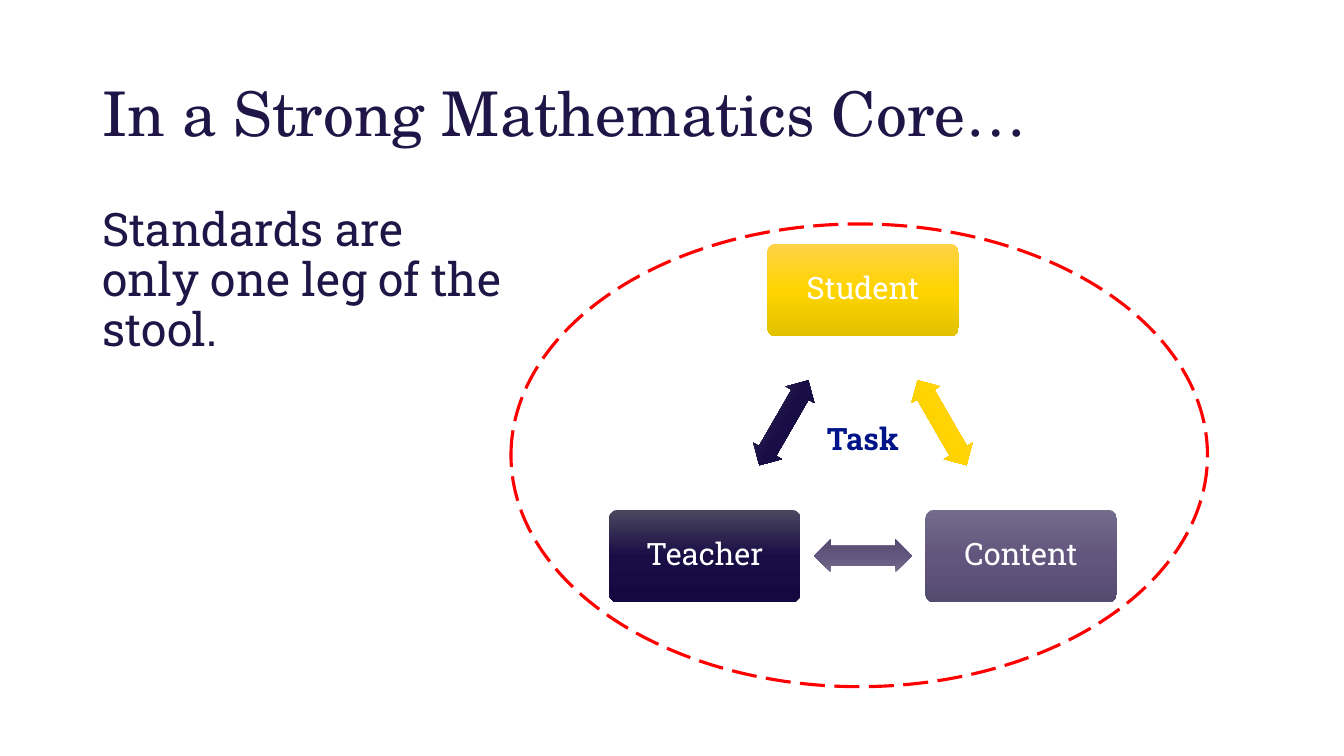
from copy import deepcopy

from pptx import Presentation
from pptx.dml.color import RGBColor
from pptx.enum.dml import MSO_LINE
from pptx.enum.shapes import MSO_SHAPE
from pptx.enum.text import MSO_ANCHOR, PP_ALIGN
from pptx.oxml.ns import qn
from pptx.util import Pt

ROUNDED = MSO_SHAPE.ROUNDED_RECTANGLE
DOUBLE_ARROW = MSO_SHAPE.LEFT_RIGHT_ARROW
OVAL = MSO_SHAPE.OVAL
LONG_DASH = MSO_LINE.LONG_DASH
TOP, MIDDLE = MSO_ANCHOR.TOP, MSO_ANCHOR.MIDDLE
LEFT, CENTER = PP_ALIGN.LEFT, PP_ALIGN.CENTER

NAVY = RGBColor(0x20, 0x15, 0x47)
BLUE = RGBColor(0x00, 0x14, 0x89)
RED = RGBColor(0xFF, 0x00, 0x00)
WHITE = RGBColor(0xFF, 0xFF, 0xFF)
# Top, middle and bottom of each gradient
YELLOWS = (RGBColor(0xFF, 0xD2, 0x47), RGBColor(0xFF, 0xD4, 0x00), RGBColor(0xE3, 0xC1, 0x00))
PURPLES = (RGBColor(0x74, 0x6C, 0x8B), RGBColor(0x62, 0x56, 0x7E), RGBColor(0x55, 0x4A, 0x70))
DARKS = (RGBColor(0x4A, 0x48, 0x5F), RGBColor(0x19, 0x0D, 0x46), RGBColor(0x15, 0x08, 0x40))

HEADING_FONT, BODY_FONT = "TeX Gyre Schola", "Roboto Slab"


def write(shape, text, size=22, font=BODY_FONT, color=WHITE, bold=False,
          align=CENTER, anchor=MIDDLE, spacing=0.9, inset_x=7.2, inset_y=3.6):
    frame = shape.text_frame
    frame.word_wrap = True
    frame.vertical_anchor = anchor
    frame.margin_left = frame.margin_right = Pt(inset_x)
    frame.margin_top = frame.margin_bottom = Pt(inset_y)
    paragraph = frame.paragraphs[0]
    paragraph.alignment = align
    paragraph.line_spacing = spacing
    run = paragraph.add_run()
    run.text = text
    run.font.size = Pt(size)
    run.font.name = font
    run.font.bold = bold
    run.font.color.rgb = color


def add_gradient_shape(kind, left, top, width, height, colors, adjustments):
    shape = slide.shapes.add_shape(kind, Pt(left), Pt(top), Pt(width), Pt(height))
    shape.shadow.inherit = False
    shape.line.fill.background()
    for index, value in enumerate(adjustments):
        shape.adjustments[index] = value
    shape.fill.gradient()
    shape.fill.gradient_angle = 270
    stop_list = shape.element.spPr.find(".//" + qn("a:gsLst"))
    stop_list.insert(1, deepcopy(stop_list[0]))
    for stop, color, position in zip(shape.fill.gradient_stops, colors, (0, 0.5, 1)):
        stop.color.rgb = color
        stop.position = position
    return shape


deck = Presentation()
deck.slide_width, deck.slide_height = Pt(960), Pt(540)
slide = deck.slides.add_slide(deck.slide_layouts[6])

title = slide.shapes.add_textbox(Pt(66), Pt(34), Pt(828), Pt(99))
write(title, "In a Strong Mathematics Core…", size=44, font=HEADING_FONT, color=NAVY, align=LEFT)

message = slide.shapes.add_textbox(Pt(66), Pt(144), Pt(300), Pt(330))
write(message, "Standards are only one leg of the stool.", size=33, color=NAVY,
      align=LEFT, anchor=TOP)

# Triangle of roles, placed around one vertical axis
AXIS = 616.4
CARD_WIDTH, CARD_HEIGHT = 137, 66.4
for role, offset, top, colors in (
    ("Student", 0, 174, YELLOWS),
    ("Content", 113, 364, PURPLES),
    ("Teacher", -113, 364, DARKS),
):
    card = add_gradient_shape(ROUNDED, AXIS + offset - CARD_WIDTH / 2, top,
                              CARD_WIDTH, CARD_HEIGHT, colors, [0.1])
    write(card, role, inset_x=10, inset_y=10)

ARROW_WIDTH, ARROW_HEIGHT = 70, 23.6
for offset, top, rotation, colors in (
    (56.5, 290.2, 60, YELLOWS),
    (0, 385.2, 180, PURPLES),
    (-56.5, 290.2, 300, DARKS),
):
    arrow = add_gradient_shape(DOUBLE_ARROW, AXIS + offset - ARROW_WIDTH / 2, top,
                               ARROW_WIDTH, ARROW_HEIGHT, colors, [0.6, 0.5])
    arrow.rotation = rotation

task = slide.shapes.add_textbox(Pt(522), Pt(296), Pt(188.6), Pt(34))
write(task, "Task", color=BLUE, bold=True, anchor=TOP, spacing=1.0)

boundary = slide.shapes.add_shape(OVAL, Pt(365), Pt(160), Pt(497.5), Pt(330.5))
boundary.shadow.inherit = False
boundary.fill.background()
boundary.line.color.rgb = RED
boundary.line.width = Pt(2.25)
boundary.line.dash_style = LONG_DASH

deck.save("out.pptx")
